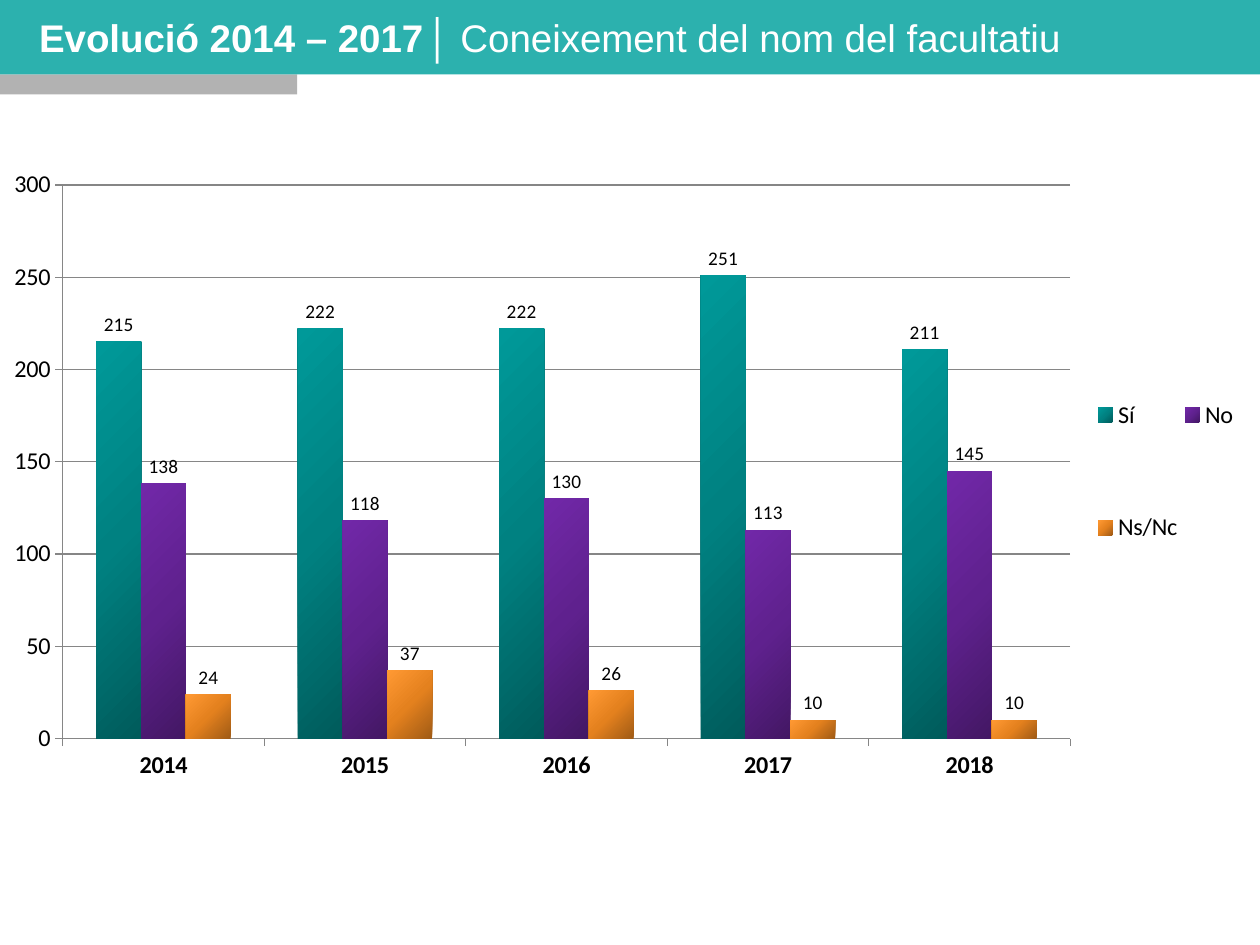
from pptx import Presentation
from pptx.chart.data import CategoryChartData
from pptx.dml.color import RGBColor
from pptx.enum.chart import XL_CHART_TYPE, XL_LABEL_POSITION, XL_LEGEND_POSITION, XL_TICK_MARK
from pptx.enum.shapes import MSO_SHAPE
from pptx.enum.text import MSO_ANCHOR
from pptx.oxml import parse_xml
from pptx.oxml.ns import nsdecls
from pptx.util import Inches, Pt

YEARS = ["2014", "2015", "2016", "2017", "2018"]
# Name, values, gradient colours from dark to light
SERIES = [
    ("Sí", (215, 222, 222, 251, 211), ("005B5B", "008181", "009999")),
    ("No", (138, 118, 130, 113, 145), ("431764", "5F218E", "7128A8")),
    ("Ns/Nc", (24, 37, 26, 10, 10), ("A05B15", "E4811E", "FF9933")),
]
TITLE = [
    ("Evolució 2014 – 2017", "Arial", True),
    ("│ ", "Times New Roman", True),
    ("Coneixement del nom del facultatiu", "Arial", False),
]
GREY = "868686"


def color(code):
    return RGBColor.from_string(code)


def style(item, **values):
    for name, value in values.items():
        setattr(item, name, value)


def text(font, size, code="000000", **values):
    style(font, size=Pt(size), **values)
    font.color.rgb = color(code)


def box(slide, left, top, width, height, code):
    bar = slide.shapes.add_shape(
        MSO_SHAPE.RECTANGLE, *map(Inches, (left, top, width, height)))
    bar.shadow.inherit = False
    bar.fill.solid()
    bar.fill.fore_color.rgb = color(code)
    bar.line.fill.background()


def title(slide):
    frame = slide.shapes.add_textbox(
        Inches(0.31), Inches(0), Inches(9.52), Inches(0.59)).text_frame
    style(frame, word_wrap=True, vertical_anchor=MSO_ANCHOR.MIDDLE,
          margin_left=0, margin_right=0, margin_top=0, margin_bottom=0)
    for words, face, bold in TITLE:
        run = frame.paragraphs[0].add_run()
        run.text = words
        text(run.font, 22, "FFFFFF", name=face, bold=bold)


def layout(parent, x, y, w, h, inner=False):
    """Place the plot area or the legend by fractions of the chart."""
    target = '<c:layoutTarget val="inner"/>' if inner else ""
    sizes = "".join(f'<c:{k} val="{v}"/>' for k, v in zip("xywh", (x, y, w, h)))
    node = parse_xml(
        f'<c:layout {nsdecls("c")}><c:manualLayout>{target}'
        f'<c:xMode val="edge"/><c:yMode val="edge"/>{sizes}'
        '</c:manualLayout></c:layout>')
    for old in parent.findall(node.tag):
        parent.remove(old)
    parent.insert(0 if inner else 1, node)


def shade(series, codes):
    """Fill the bars with a three-stop gradient."""
    stops = "".join(
        f'<a:gs pos="{i * 50000}"><a:srgbClr val="{code}"/></a:gs>'
        for i, code in enumerate(codes))
    series._element.get_or_add_spPr().insert(0, parse_xml(
        f'<a:gradFill {nsdecls("a")} rotWithShape="1"><a:gsLst>{stops}</a:gsLst>'
        f'<a:lin ang="{225 * 60000}" scaled="0"/></a:gradFill>'))


def stroke(line):
    line.color.rgb = color(GREY)
    line.width = Pt(0.75)


def axes(chart):
    for axis, bold in ((chart.category_axis, True), (chart.value_axis, False)):
        style(axis, major_tick_mark=XL_TICK_MARK.OUTSIDE,
              minor_tick_mark=XL_TICK_MARK.NONE)
        text(axis.tick_labels.font, 13.8, name="Calibri", bold=bold)
        stroke(axis.format.line)
    style(chart.value_axis, minimum_scale=0, maximum_scale=300, major_unit=50,
          has_major_gridlines=True)
    stroke(chart.value_axis.major_gridlines.format.line)


def columns(slide):
    data = CategoryChartData()
    data.categories = YEARS
    for name, values, _ in SERIES:
        data.add_series(name, values)
    chart = slide.shapes.add_chart(
        XL_CHART_TYPE.COLUMN_CLUSTERED, Inches(-0.02), Inches(1.29),
        Inches(9.97), Inches(5.11), data).chart
    style(chart, has_title=False, has_legend=True)
    text(chart.font, 17.7, name="Arial")
    axes(chart)

    # Bars and their values
    plot = chart.plots[0]
    style(plot, gap_width=150, overlap=0, vary_by_categories=False)
    for series, (_, _, codes) in zip(plot.series, SERIES):
        shade(series, codes)
        series.invert_if_negative = False
        style(series.data_labels, show_value=True,
              position=XL_LABEL_POSITION.OUTSIDE_END)
        text(series.data_labels.font, 11, name="Calibri", bold=False)

    # Legend and plot placement
    style(chart.legend, position=XL_LEGEND_POSITION.RIGHT, include_in_layout=False)
    text(chart.legend.font, 13.8, name="Calibri", bold=False)
    layout(chart.legend._element, 0.87, 0.24, 0.12, 0.48)
    layout(chart._chartSpace.chart.plotArea, 0.052, 0.035, 0.802, 0.86, True)


def main():
    deck = Presentation()
    style(deck, slide_width=Inches(10), slide_height=Inches(7.5))
    slide = deck.slides.add_slide(deck.slide_layouts[6])
    # Header band with a grey tab below
    box(slide, 0, 0.59, 2.36, 0.16, "B2B2B2")
    box(slide, 0, 0, 10, 0.59, "2CB1AE")
    title(slide)
    columns(slide)
    deck.save("out.pptx")


if __name__ == "__main__":
    main()
